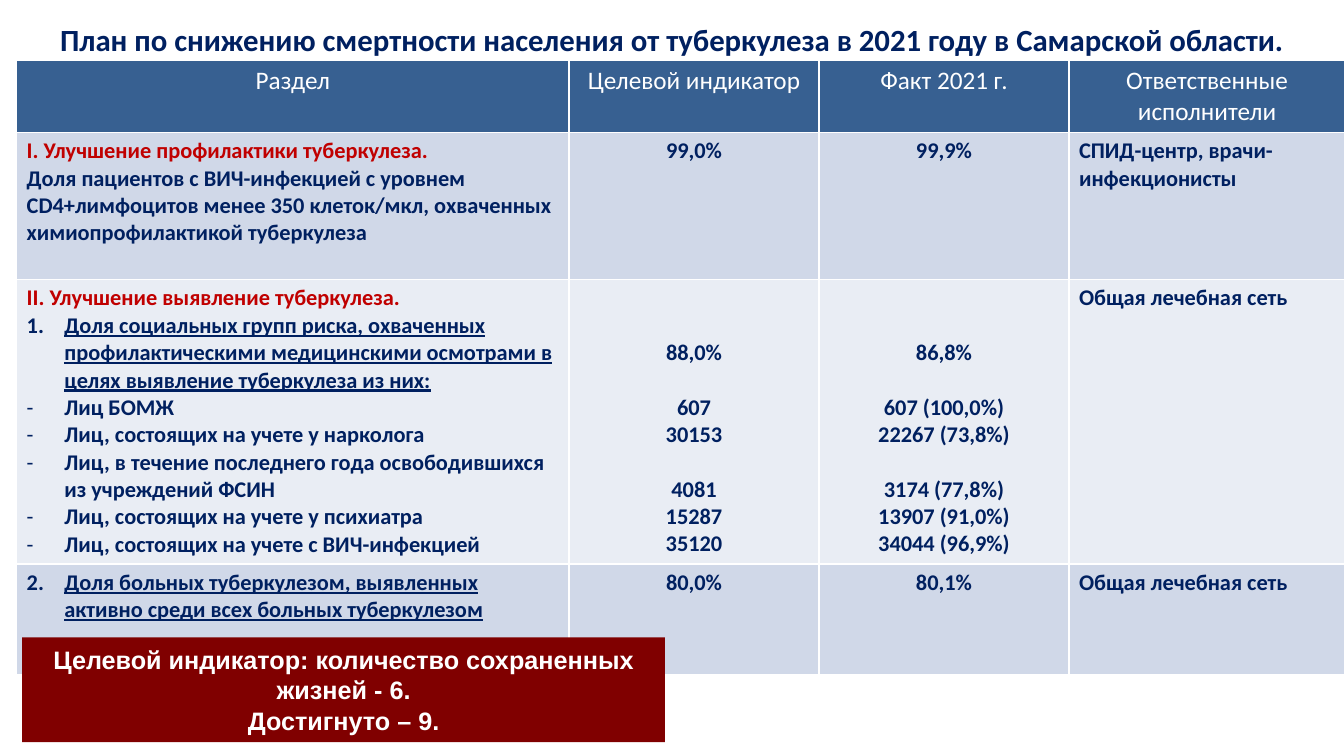
"""Build the slide on the 2021 tuberculosis mortality plan with its table of indicators."""
from dataclasses import dataclass

from lxml.etree import SubElement
from pptx import Presentation
from pptx.dml.color import RGBColor
from pptx.enum.shapes import MSO_SHAPE as Shape
from pptx.enum.text import MSO_ANCHOR as Anchor, PP_ALIGN as Align
from pptx.oxml.ns import qn
from pptx.util import Cm, Pt

NAVY, RED, MAROON, WHITE = "002060", "C00000", "800000", "FFFFFF"
HEADER_FILL, DARK_BAND, LIGHT_BAND = "376091", "D0D8E8", "E9EDF4"
COLUMN_WIDTHS = (13.92, 6.3, 6.3, 6.96)
ROW_HEIGHTS = (1.8, 3.71, 7.17, 2.8)
BODY_LINE = Pt(19.5)
HANGING = Cm(0.95)


@dataclass(frozen=True)
class Line:
    text: str
    color: str = NAVY
    size: float = 16
    bold: bool = True
    underline: bool = False
    number: int = 0
    dash: bool = False
    lines_before: int = 0
    font: str = "Calibri"


@dataclass(frozen=True)
class Entry:
    lines: tuple[Line, ...]
    centered: bool = False
    lines_above: int = 0


def rgb(color: str) -> RGBColor:
    return RGBColor.from_string(color)


def add_bullet(paragraph, line: Line) -> None:
    properties = paragraph._p.get_or_add_pPr()
    properties.set("marL", str(HANGING))
    properties.set("indent", str(-HANGING))
    if line.number:
        SubElement(properties, qn("a:buFont"), typeface="+mj-lt")
        SubElement(properties, qn("a:buAutoNum"), type="arabicPeriod", startAt=str(line.number))
    else:
        SubElement(properties, qn("a:buFontTx"))
        SubElement(properties, qn("a:buChar"), char="-")


def write_lines(frame, lines: tuple[Line, ...], alignment: Align) -> None:
    frame.word_wrap = True
    for index, line in enumerate(lines):
        paragraph = frame.add_paragraph() if index else frame.paragraphs[0]
        paragraph.text = line.text
        paragraph.alignment = alignment
        if line.number or line.dash:
            add_bullet(paragraph, line)
        if line.lines_before:
            paragraph.space_before = BODY_LINE * line.lines_before
        font = paragraph.font
        font.name, font.size = line.font, Pt(line.size)
        font.bold, font.underline = line.bold, line.underline
        font.color.rgb = rgb(line.color)


def add_borders(cell) -> None:
    properties = cell._tc.get_or_add_tcPr()
    for side in ("a:lnL", "a:lnR", "a:lnT", "a:lnB"):
        border = SubElement(properties, qn(side), w=str(Pt(1)))
        fill = SubElement(border, qn("a:solidFill"))
        SubElement(fill, qn("a:srgbClr"), val=WHITE)


def fill_cell(cell, entry: Entry, fill: str) -> None:
    add_borders(cell)
    cell.fill.solid()
    cell.fill.fore_color.rgb = rgb(fill)
    cell.vertical_anchor = Anchor.TOP
    cell.margin_top = Cm(0.13) + BODY_LINE * entry.lines_above
    write_lines(cell.text_frame, entry.lines, Align.CENTER if entry.centered else Align.LEFT)


def header(text: str) -> Entry:
    return Entry((Line(text, WHITE, 18, bold=False),), centered=True)


def value(text: str) -> Entry:
    return Entry((Line(text),), centered=True)


def group_values(total: str, *groups: str) -> Entry:
    gaps = (1, 0, 1, 0, 0)
    lines = tuple(Line(text, lines_before=gap) for text, gap in zip(groups, gaps))
    return Entry((Line(total), *lines), centered=True, lines_above=2)


def executors(text: str) -> Entry:
    return Entry((Line(text),))


RISK_GROUPS = (
    "Лиц БОМЖ",
    "Лиц, состоящих на учете у нарколога",
    "Лиц, в течение последнего года освободившихся из учреждений ФСИН",
    "Лиц, состоящих на учете у психиатра",
    "Лиц, состоящих на учете с ВИЧ-инфекцией",
)
PREVENTION = Entry((
    Line("I. Улучшение профилактики туберкулеза.", RED),
    Line("Доля пациентов с ВИЧ-инфекцией с уровнем CD4+лимфоцитов менее 350 клеток/мкл, "
         "охваченных химиопрофилактикой туберкулеза"),
))
DETECTION = Entry((
    Line("II. Улучшение выявление туберкулеза.", RED),
    Line("Доля социальных групп риска, охваченных профилактическими медицинскими осмотрами "
         "в целях выявление туберкулеза из них:", underline=True, number=1),
    *(Line(group, dash=True) for group in RISK_GROUPS),
))
ACTIVE_DETECTION = Entry((
    Line("Доля больных туберкулезом, выявленных активно среди всех больных туберкулезом",
         underline=True, number=2),
))
ROWS = (
    (HEADER_FILL, (header("Раздел"), header("Целевой индикатор"), header("Факт 2021 г."),
                   header("Ответственные исполнители"))),
    (DARK_BAND, (PREVENTION, value("99,0%"), value("99,9%"),
                 executors("СПИД-центр, врачи-инфекционисты"))),
    (LIGHT_BAND, (DETECTION,
                  group_values("88,0%", "607", "30153", "4081", "15287", "35120"),
                  group_values("86,8%", "607 (100,0%)", "22267 (73,8%)", "3174 (77,8%)",
                               "13907 (91,0%)", "34044 (96,9%)"),
                  executors("Общая лечебная сеть"))),
    (DARK_BAND, (ACTIVE_DETECTION, value("80,0%"), value("80,1%"),
                 executors("Общая лечебная сеть"))),
)
TITLE = Line("План по снижению смертности населения от туберкулеза в 2021 году "
             "в Самарской области.", size=22)
RESULT = tuple(Line(text, WHITE, 18, font="Arial") for text in (
    "Целевой индикатор: количество сохраненных жизней - 6.", "Достигнуто – 9."))


def add_title(slide) -> None:
    frame = slide.shapes.add_textbox(0, 0, Cm(33.87), Cm(1.96)).text_frame
    frame.vertical_anchor = Anchor.MIDDLE
    write_lines(frame, (TITLE,), Align.CENTER)


def add_plan_table(slide) -> None:
    table = slide.shapes.add_table(
        len(ROWS), len(COLUMN_WIDTHS), Cm(0.42), Cm(1.53),
        Cm(sum(COLUMN_WIDTHS)), Cm(sum(ROW_HEIGHTS))).table
    for column, width in zip(table.columns, COLUMN_WIDTHS):
        column.width = Cm(width)
    for row, height, (fill, entries) in zip(table.rows, ROW_HEIGHTS, ROWS):
        row.height = Cm(height)
        for cell, entry in zip(row.cells, entries):
            fill_cell(cell, entry, fill)


def add_result(slide) -> None:
    shape = slide.shapes.add_shape(Shape.RECTANGLE, Cm(0.56), Cm(16.06), Cm(16.2), Cm(2.64))
    shape.shadow.inherit = False
    shape.fill.solid()
    shape.fill.fore_color.rgb = rgb(MAROON)
    shape.line.fill.background()
    shape.text_frame.vertical_anchor = Anchor.MIDDLE
    write_lines(shape.text_frame, RESULT, Align.CENTER)


def main() -> None:
    presentation = Presentation()
    presentation.slide_width, presentation.slide_height = Cm(33.87), Cm(19.05)
    slide = presentation.slides.add_slide(presentation.slide_layouts[6])
    add_title(slide)
    add_plan_table(slide)
    add_result(slide)
    presentation.save("out.pptx")


if __name__ == "__main__":
    main()
